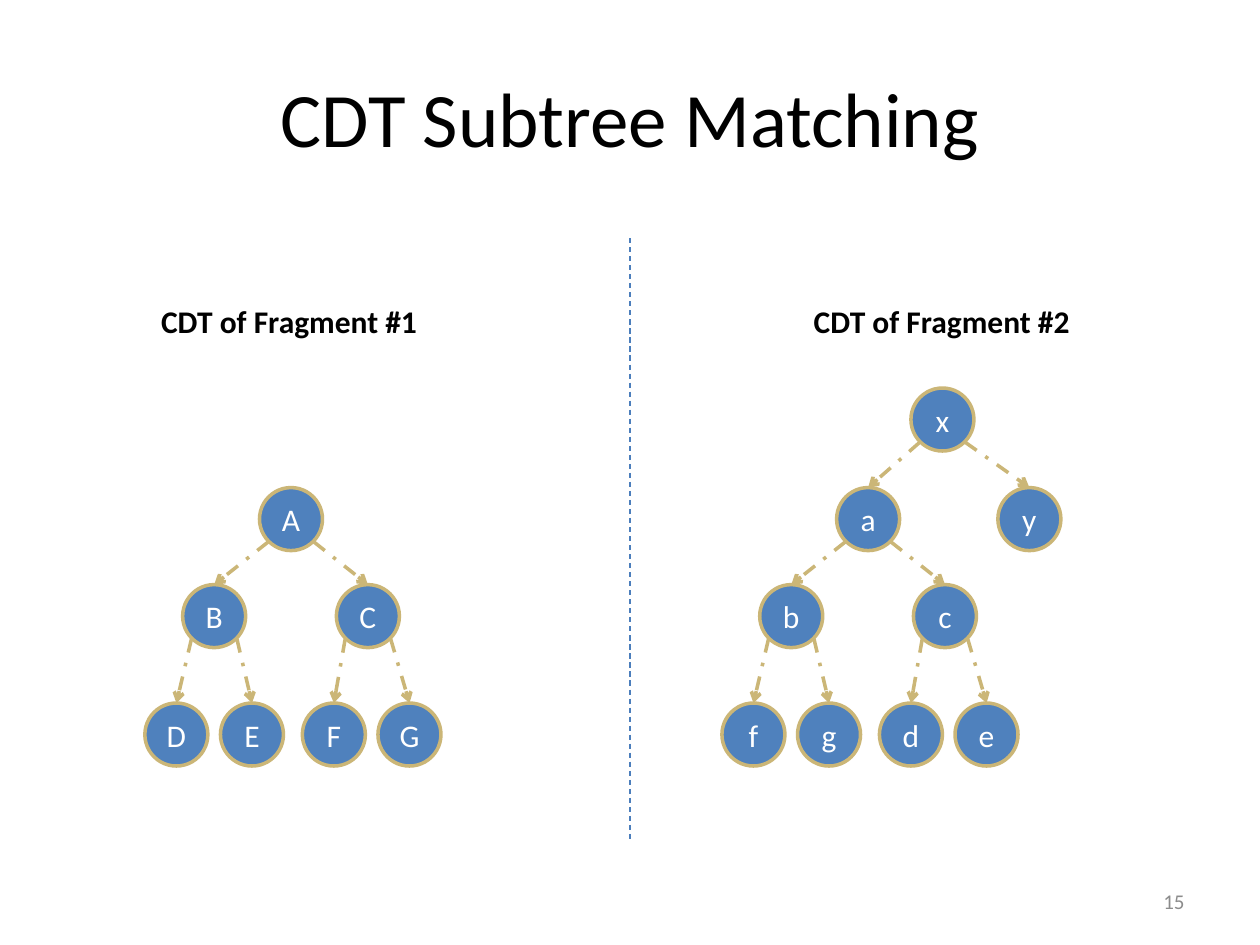
from lxml import etree
from pptx import Presentation
from pptx.dml.color import RGBColor
from pptx.enum.dml import MSO_LINE
from pptx.enum.shapes import MSO_CONNECTOR, MSO_SHAPE
from pptx.enum.text import MSO_ANCHOR, PP_ALIGN
from pptx.oxml.ns import qn
from pptx.util import Inches, Pt

OVAL, LINE = MSO_SHAPE.OVAL, MSO_CONNECTOR.STRAIGHT
LEFT, MID, RIGHT = PP_ALIGN.LEFT, PP_ALIGN.CENTER, PP_ALIGN.RIGHT
TOP, HALF = MSO_ANCHOR.TOP, MSO_ANCHOR.MIDDLE
DASH, DOT = MSO_LINE.DASH, MSO_LINE.DASH_DOT


class Theme:
    face = "Calibri"
    ink, white, grey = "000000", "FFFFFF", "8C8C8C"
    blue, gold, rule = "4F81BD", "CBB677", "4B7EBC"
    title, body, small = Pt(44), Pt(18), Pt(12)
    thick, thin = Pt(2), Pt(0.75)


NODE = 0.5             # circle size
SIDE, DROP = 0.18, 0.43  # where an edge leaves its parent: off centre, below top

# Places are the top left of each circle, from the root of the subtree
SPOTS = [(0, 0), (-0.61, 0.77), (0.61, 0.77),
         (-0.91, 1.71), (-0.31, 1.71), (0.34, 1.71), (0.94, 1.71)]


def tint(code):
    return RGBColor.from_string(code)


class Board:
    def __init__(self, slide, theme):
        self.slide, self.theme = slide, theme

    def label(self, frame, words, size, color, align, anchor, bold=False):
        frame.vertical_anchor = anchor
        par = frame.paragraphs[0]
        par.alignment = align
        run = par.add_run()
        run.text = words
        style = {"name": self.theme.face, "size": size, "bold": bold}
        for key, value in style.items():
            setattr(run.font, key, value)
        run.font.color.rgb = tint(color)

    def text(self, box, words, size, color, align, anchor, bold=False, wrap=True):
        frame = self.slide.shapes.add_textbox(*map(Inches, box)).text_frame
        frame.word_wrap = wrap
        self.label(frame, words, size, color, align, anchor, bold)

    def node(self, x, y, name):
        oval = self.slide.shapes.add_shape(
            OVAL, Inches(x), Inches(y), Inches(NODE), Inches(NODE))
        oval.shadow.inherit = False
        oval.fill.solid()
        oval.fill.fore_color.rgb = tint(self.theme.blue)
        oval.line.color.rgb = tint(self.theme.gold)
        oval.line.width = self.theme.thick
        self.label(oval.text_frame, name, self.theme.body, self.theme.white, MID, HALF)
        return oval

    def line(self, start, end, color, width, dash):
        link = self.slide.shapes.add_connector(
            LINE, *map(Inches, (*start, *end)))
        link.line.color.rgb = tint(color)
        link.line.width = width
        link.line.dash_style = dash
        etree.SubElement(link.element.spPr, qn("a:effectLst"))
        return link

    def edge(self, up, down, side):
        start = (up.left.inches + NODE / 2 + side * SIDE, up.top.inches + DROP)
        end = (down.left.inches + NODE / 2, down.top.inches)
        link = self.line(start, end, self.theme.gold, self.theme.thick, DOT)
        link.end_connect(down, 0)
        stroke = link.element.spPr.find(qn("a:ln"))
        etree.SubElement(stroke, qn("a:tailEnd"), type="arrow")

    def tree(self, x, y, names):
        """Draw a full binary tree, names level by level; return its root."""
        nodes = [self.node(x + dx, y + dy, name)
                 for (dx, dy), name in zip(SPOTS, names)]
        for i, down in enumerate(nodes[1:], 1):
            self.edge(nodes[(i - 1) // 2], down, -1 if i % 2 else 1)
        return nodes[0]


def main():
    deck = Presentation()
    deck.slide_width, deck.slide_height = Inches(10), Inches(7.5)
    theme = Theme()
    board = Board(deck.slides.add_slide(deck.slide_layouts[6]), theme)

    # Title
    board.text((0.5, 0.3, 9, 1.25), "CDT Subtree Matching",
               theme.title, theme.ink, MID, HALF)

    # Matching subtrees
    board.tree(2.06, 3.87, "ABCDEFG")
    match = board.tree(6.64, 3.87, "abcfgde")

    # Root and sibling above the second subtree
    root = board.node(7.23, 3.08, "x")
    leaf = board.node(7.92, 3.87, "y")
    board.edge(root, match, -1)
    board.edge(root, leaf, 1)

    # Headings and divider
    for x, words in ((1.18, "CDT of Fragment #1"), (6.36, "CDT of Fragment #2")):
        board.text((x, 2.35, 2.25, 0.4), words, theme.body, theme.ink,
                   LEFT, TOP, bold=True, wrap=False)
    board.line((5, 1.89), (5, 6.67), theme.rule, theme.thin, DASH)

    # Page number
    board.text((7.17, 6.95, 2.33, 0.4), "15", theme.small, theme.grey, RIGHT, HALF)

    deck.save("out.pptx")


if __name__ == "__main__":
    main()
